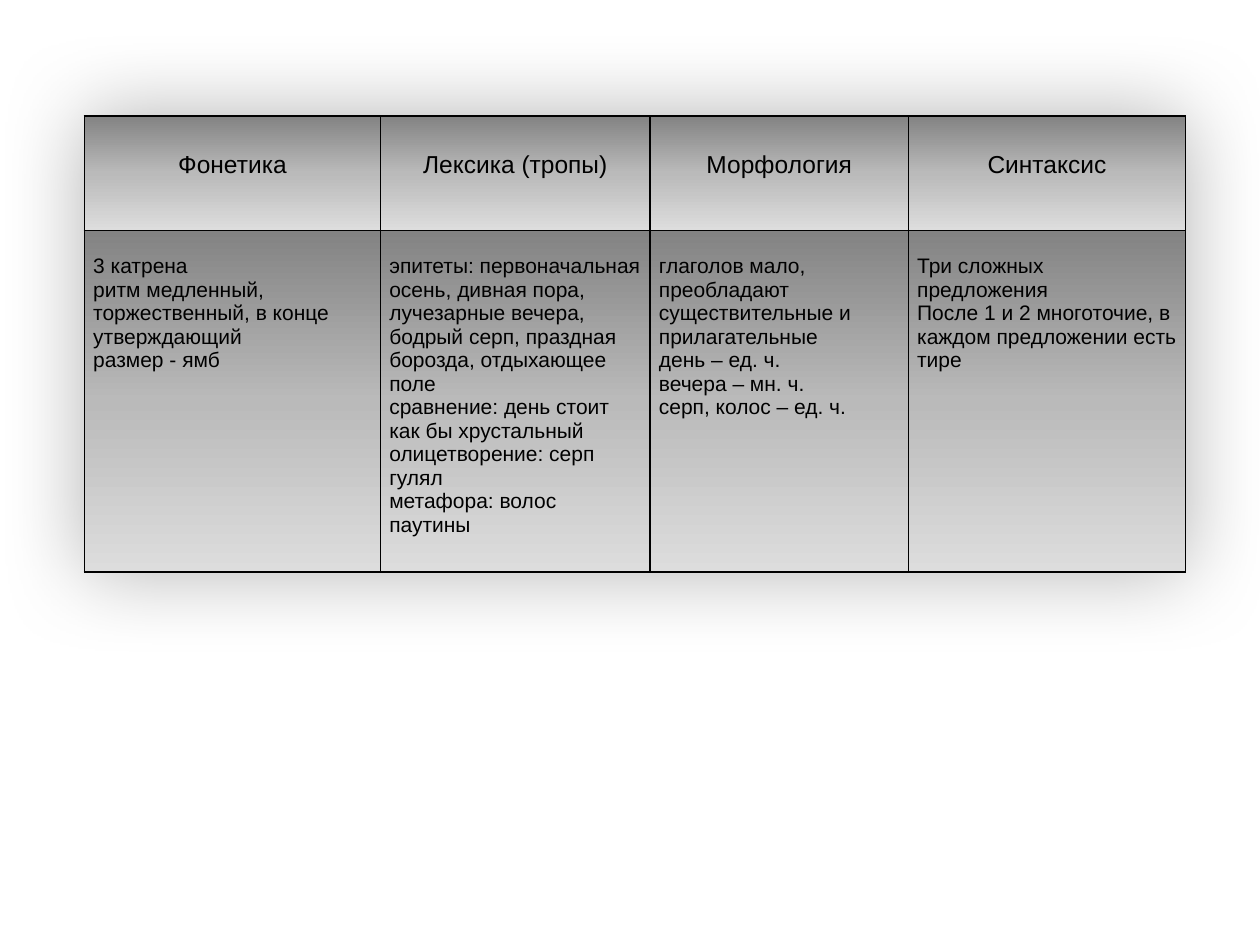
from lxml.etree import SubElement
from pptx import Presentation
from pptx.dml.color import RGBColor
from pptx.enum.text import PP_ALIGN
from pptx.oxml import parse_xml
from pptx.oxml.ns import nsdecls, qn
from pptx.util import Inches, Pt


def color(value):
    return RGBColor.from_string(value)


def add_borders_and_gradient(cell):
    properties = cell._tc.get_or_add_tcPr()
    for side in ("lnL", "lnR", "lnT", "lnB"):
        line = SubElement(properties, qn(f"a:{side}"), w=str(Pt(1)))
        solid = SubElement(line, qn("a:solidFill"))
        SubElement(solid, qn("a:srgbClr"), val="000000")
    gradient = SubElement(properties, qn("a:gradFill"), rotWithShape="1")
    stops = SubElement(gradient, qn("a:gsLst"))
    for position, shade in ((0, "838383"), (50, "BABABA"), (100, "DDDDDD")):
        stop = SubElement(stops, qn("a:gs"), pos=str(position * 1000))
        SubElement(stop, qn("a:srgbClr"), val=shade)
    SubElement(gradient, qn("a:lin"), ang="5400000", scaled="0")


columns = [
    (2.35, "Фонетика", [
        "3 катрена",
        "ритм медленный, торжественный, в конце утверждающий",
        "размер - ямб",
    ]),
    (2.14, "Лексика (тропы)", [
        "эпитеты: первоначальная осень, дивная пора, лучезарные вечера, "
        "бодрый серп, праздная борозда, отдыхающее поле",
        "сравнение: день стоит как бы хрустальный",
        "олицетворение: серп гулял",
        "метафора: волос паутины",
    ]),
    (2.05, "Морфология", [
        "глаголов мало, преобладают существительные и прилагательные",
        "день – ед. ч.",
        "вечера – мн. ч.",
        "серп, колос – ед. ч.",
    ]),
    (2.2, "Синтаксис", [
        "Три сложных предложения",
        "После 1 и 2 многоточие, в каждом предложении есть тире",
    ]),
]
row_styles = [
    (0.91, 0.25, 14, PP_ALIGN.CENTER, 1.15),
    (2.71, 0.19, 12, PP_ALIGN.LEFT, 1.0),
]

deck = Presentation()
deck.slide_width, deck.slide_height = Inches(10), Inches(7.5)
page = deck.slides.add_slide(deck.slide_layouts[6])

table_width = sum(width for width, heading, lines in columns)
table_height = sum(style[0] for style in row_styles)
table = page.shapes.add_table(
    len(row_styles), len(columns),
    Inches(0.67), Inches(0.92), Inches(table_width), Inches(table_height),
).table
table.first_row = False
table.horz_banding = False
table._tbl.tblPr.insert(0, parse_xml(
    f'<a:effectLst {nsdecls("a")}>'
    f'<a:outerShdw blurRad="{Pt(50)}" dist="0" dir="0" algn="ctr" rotWithShape="0">'
    '<a:srgbClr val="000000"><a:alpha val="30000"/></a:srgbClr>'
    '</a:outerShdw></a:effectLst>'
))

for row, style in zip(table.rows, row_styles):
    row.height = Inches(style[0])

for column_index, (width, heading, lines) in enumerate(columns):
    table.columns[column_index].width = Inches(width)
    for row_index, texts in enumerate(([heading], lines)):
        height, top_margin, size, alignment, spacing = row_styles[row_index]
        cell = table.cell(row_index, column_index)
        cell.margin_left = cell.margin_right = Inches(0.07)
        cell.margin_top, cell.margin_bottom = Inches(top_margin), 0
        add_borders_and_gradient(cell)
        cell.text_frame.text = "\n".join(texts)
        for para in cell.text_frame.paragraphs:
            para.alignment = alignment
            para.line_spacing = spacing
            para.font.name = "Arial"
            para.font.size = Pt(size)
            para.font.color.rgb = color("000000")

deck.save("out.pptx")
